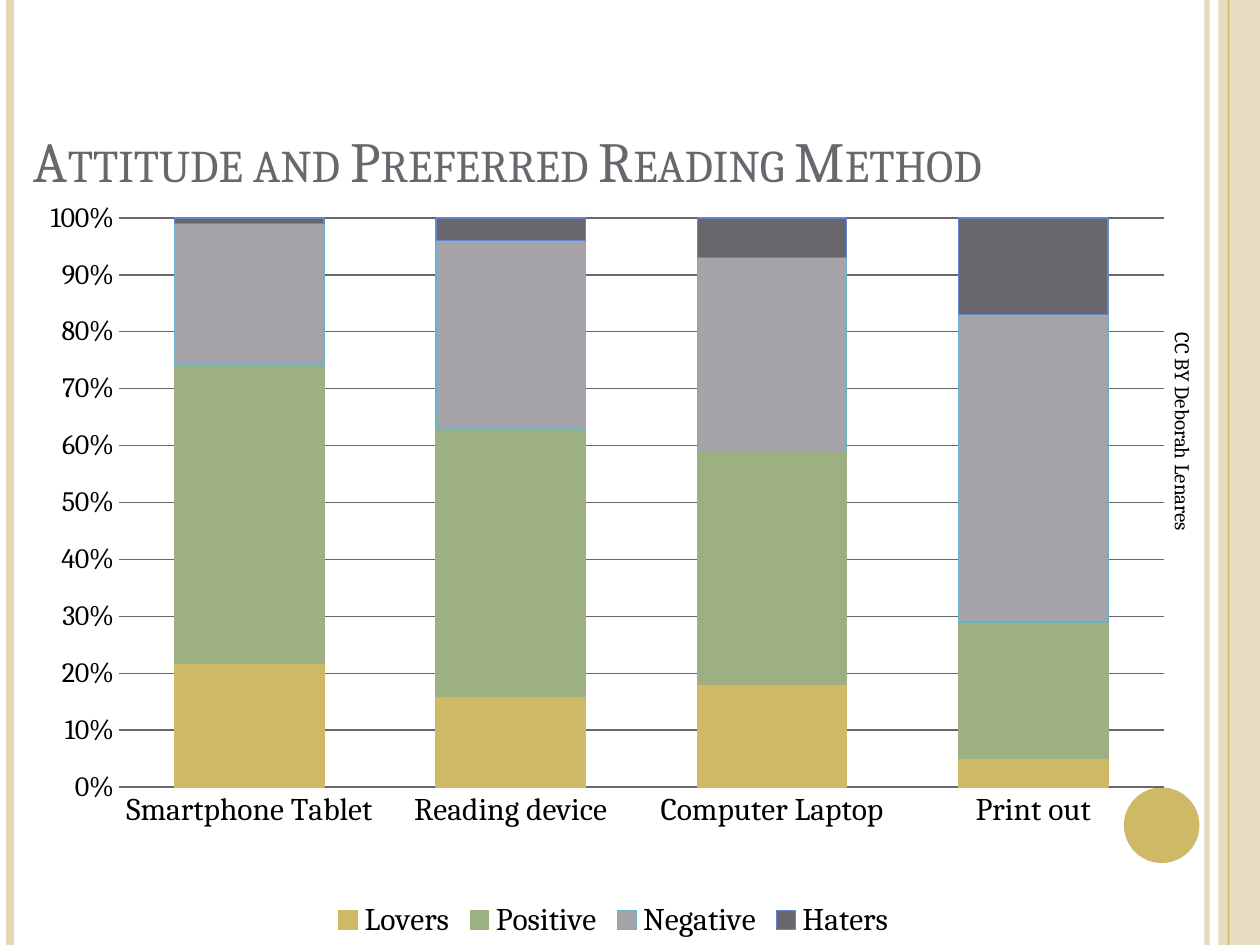
from lxml import etree
from pptx import Presentation
from pptx.chart.data import CategoryChartData
from pptx.dml.color import RGBColor
from pptx.enum.chart import XL_CHART_TYPE, XL_LEGEND_POSITION, XL_TICK_MARK
from pptx.enum.shapes import MSO_CONNECTOR, MSO_SHAPE
from pptx.enum.text import MSO_ANCHOR
from pptx.oxml.ns import qn
from pptx.util import Inches, Pt

STACKED = XL_CHART_TYPE.COLUMN_STACKED_100
LEGEND_BOTTOM = XL_LEGEND_POSITION.BOTTOM
NO_TICK = XL_TICK_MARK.NONE
STRAIGHT = MSO_CONNECTOR.STRAIGHT
RECTANGLE, OVAL = MSO_SHAPE.RECTANGLE, MSO_SHAPE.OVAL
BOTTOM, MIDDLE = MSO_ANCHOR.BOTTOM, MSO_ANCHOR.MIDDLE

FONT = "Cambria"
GOLD, SAND, GRAY, BLACK = "CEB966", "E3D9B8", "69676D", "000000"
WIDTH, HEIGHT = 10, 7.5

TITLE = "Attitude and Preferred Reading Method"
CREDIT = "CC BY Deborah Lenares"
CATEGORIES = ["Smartphone Tablet", "Reading device", "Computer Laptop", "Print out"]
SERIES = [
    ("Lovers", (22, 16, 18, 5), GOLD, GOLD),
    ("Positive", (53, 47, 41, 24), "9CB084", "9CB084"),
    ("Negative", (25, 33, 34, 54), "A5A3A8", "6BB1C9"),
    ("Haters", (1, 4, 7, 17), GRAY, "6585CF"),
]
PLOT_LAYOUT = {"x": 0.09, "y": 0.051, "w": 0.866, "h": 0.743}


def color(hex_string):
    return RGBColor.from_string(hex_string)


def set_alpha(fill_owner, percent):
    rgb = fill_owner.find(".//" + qn("a:srgbClr"))
    etree.SubElement(rgb, qn("a:alpha")).set("val", str(percent * 1000))


def style_font(font, size, hex_string=BLACK):
    font.name = FONT
    font.size = Pt(size)
    font.bold = False
    font.color.rgb = color(hex_string)


def add_stripe(slide, x, hex_string, weight, alpha=100):
    stripe = slide.shapes.add_connector(
        STRAIGHT, Inches(x), Inches(0), Inches(x), Inches(HEIGHT))
    stripe.line.color.rgb = color(hex_string)
    stripe.line.width = Pt(weight)
    properties = stripe._element.spPr
    if alpha < 100:
        set_alpha(properties, alpha)
    etree.SubElement(properties, qn("a:effectLst"))


def add_plain_shape(slide, kind, box, hex_string):
    shape = slide.shapes.add_shape(kind, *map(Inches, box))
    shape.shadow.inherit = False
    shape.fill.solid()
    shape.fill.fore_color.rgb = color(hex_string)
    shape.line.fill.background()
    return shape


def add_text(slide, box, text, size, hex_string, anchor):
    shape = slide.shapes.add_textbox(*map(Inches, box))
    frame = shape.text_frame
    frame.word_wrap = True
    frame.vertical_anchor = anchor
    paragraph = frame.paragraphs[0]
    paragraph.text = text
    style_font(paragraph.font, size, hex_string)
    return shape


def set_plot_layout(chart, layout):
    plot_area = chart._chartSpace.chart.plotArea
    for old in plot_area.findall(qn("c:layout")):
        plot_area.remove(old)
    element = etree.Element(qn("c:layout"))
    manual = etree.SubElement(element, qn("c:manualLayout"))
    settings = {"layoutTarget": "inner", "xMode": "edge", "yMode": "edge", **layout}
    for tag, value in settings.items():
        etree.SubElement(manual, qn("c:" + tag)).set("val", str(value))
    plot_area.insert(0, element)


def add_attitude_chart(slide):
    data = CategoryChartData()
    data.categories = CATEGORIES
    for name, values, *_ in SERIES:
        data.add_series(name, values)
    box = map(Inches, (0.08, 1.42, 9.58, 6.08))
    chart = slide.shapes.add_chart(STACKED, *box, data).chart
    style_font(chart.font, 10)
    chart.has_title = False
    chart.has_legend = True
    chart.legend.position = LEGEND_BOTTOM
    chart.legend.include_in_layout = False
    style_font(chart.legend.font, 18)

    plot = chart.plots[0]
    plot.gap_width = 75
    plot.overlap = 100
    for series, (_, _, fill, line) in zip(plot.series, SERIES):
        series.format.fill.solid()
        series.format.fill.fore_color.rgb = color(fill)
        series.format.line.color.rgb = color(line)
        series.format.line.width = Pt(0.75)

    category_axis, value_axis = chart.category_axis, chart.value_axis
    for axis, size in ((category_axis, 18), (value_axis, 16)):
        axis.major_tick_mark = axis.minor_tick_mark = NO_TICK
        style_font(axis.tick_labels.font, size)
    value_axis.maximum_scale = 1
    value_axis.tick_labels.number_format = "0%"
    value_axis.tick_labels.number_format_is_linked = False
    value_axis.has_major_gridlines = True
    value_axis.format.line.fill.background()
    for line in (value_axis.major_gridlines.format.line, category_axis.format.line):
        line.color.rgb = color(GRAY)
        line.width = Pt(0.75)
    set_plot_layout(chart, PLOT_LAYOUT)


def main():
    presentation = Presentation()
    presentation.slide_width, presentation.slide_height = Inches(WIDTH), Inches(HEIGHT)
    slide = presentation.slides.add_slide(presentation.slide_layouts[6])

    add_stripe(slide, 9.58, SAND, 3, 93)
    add_stripe(slide, 0.08, SAND, 4.5)
    add_stripe(slide, 9.75, GOLD, 1.5)
    band = add_plain_shape(slide, RECTANGLE, (9.67, 0, 0.33, HEIGHT), SAND)
    set_alpha(band._element.spPr, 87)
    add_stripe(slide, 9.75, GOLD, 0.75)
    add_plain_shape(slide, OVAL, (8.92, 6.25, 0.6, 0.6), GOLD)

    add_attitude_chart(slide)

    title = add_text(slide, (0.17, 0.42, 9.58, 1.17), TITLE, 32.4, GRAY, BOTTOM)
    title.text_frame.paragraphs[0].font._element.set("cap", "small")
    credit = add_text(slide, (7.64, 4.09, 3.5, 0.4), CREDIT, 12, BLACK, MIDDLE)
    credit.rotation = 90

    presentation.save("out.pptx")


if __name__ == "__main__":
    main()
